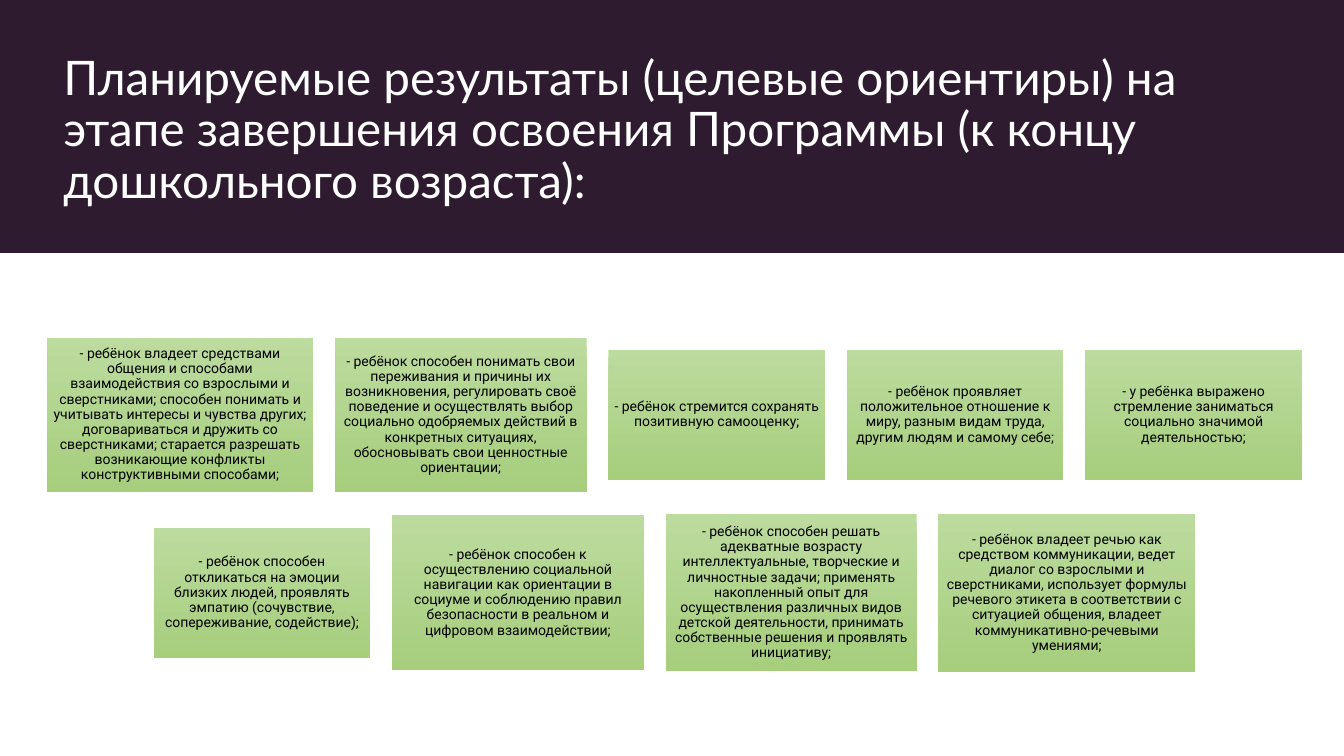
import dataclasses

import pptx
import pptx.dml.color
import pptx.enum.shapes
import pptx.enum.text
import pptx.util


@dataclasses.dataclass(frozen=True)
class Theme:
    paper: str = "FFFFFF"
    band: str = "2F1B30"
    card_top: str = "BCDB9E"
    card_bottom: str = "A6CE7D"
    title_ink: str = "FFFFFF"
    card_ink: str = "000000"
    title_font: str = "Lato"
    card_font: str = "Roboto"
    title_size: int = 34
    card_size: int = 10
    line_spacing: float = 0.9


TITLE = ("Планируемые результаты (целевые ориентиры) на этапе завершения "
         "освоения Программы (к концу дошкольного возраста):")

# Lengths are percentages of the slide's width and height.
ROW_CENTER = 50.18
GAP = 1.61
SMALL = (16.13, 17.2)
ROWS = [
    (54.87, [
        ((19.8, 20.4),
         "- ребёнок владеет средствами общения и способами взаимодействия со "
         "взрослыми и сверстниками; способен понимать и учитывать интересы и "
         "чувства других; договариваться и дружить со сверстниками; старается "
         "разрешать возникающие конфликты конструктивными способами;"),
        ((18.75, 20.4),
         "- ребёнок способен понимать свои переживания и причины их "
         "возникновения, регулировать своё поведение и осуществлять выбор "
         "социально одобряемых действий в конкретных ситуациях, обосновывать "
         "свои ценностные ориентации;"),
        (SMALL, "- ребёнок стремится сохранять позитивную самооценку;"),
        (SMALL,
         "- ребёнок проявляет положительное отношение к миру, разным видам "
         "труда, другим людям и самому себе;"),
        (SMALL,
         "- у ребёнка выражено стремление заниматься социально значимой "
         "деятельностью;"),
    ]),
    (78.4, [
        (SMALL,
         "- ребёнок способен откликаться на эмоции близких людей, проявлять "
         "эмпатию (сочувствие, сопереживание, содействие);"),
        ((18.75, 20.53),
         "- ребёнок способен к осуществлению социальной навигации как "
         "ориентации в социуме и соблюдению правил безопасности в реальном и "
         "цифровом взаимодействии;"),
        ((18.68, 20.8),
         "- ребёнок способен решать адекватные возрасту интеллектуальные, "
         "творческие и личностные задачи; применять накопленный опыт для "
         "осуществления различных видов детской деятельности, принимать "
         "собственные решения и проявлять инициативу;"),
        ((19.13, 20.93),
         "- ребёнок владеет речью как средством коммуникации, ведет диалог со "
         "взрослыми и сверстниками, использует формулы речевого этикета в "
         "соответствии с ситуацией общения, владеет коммуникативно-речевыми "
         "умениями;"),
    ]),
]


def rgb(code):
    return pptx.dml.color.RGBColor.from_string(code)


def apply(target, values):
    for name, value in values.items():
        setattr(target, name, value)


class SlideBuilder:
    def __init__(self, prs, theme):
        self.theme = theme
        self.width, self.height = prs.slide_width, prs.slide_height
        self.s = prs.slides.add_slide(prs.slide_layouts[6])
        fill = self.s.background.fill
        fill.solid()
        fill.fore_color.rgb = rgb(theme.paper)

    def box(self, x, y, w, h):
        """Turn percentages of the slide into lengths."""
        return [round(share * side / 100) for share, side in
                zip((x, y, w, h), (self.width, self.height) * 2)]

    def rect(self, *shares):
        sp = self.s.shapes.add_shape(
            pptx.enum.shapes.MSO_SHAPE.RECTANGLE, *self.box(*shares))
        sp.shadow.inherit = False
        sp.line.fill.background()
        return sp

    def set_text(self, sp, text, frame, align, font, ink):
        tf = sp.text_frame
        apply(tf, {"word_wrap": True, **frame})
        p = tf.paragraphs[0]
        apply(p, {"alignment": align, "line_spacing": self.theme.line_spacing})
        r = p.add_run()
        r.text = text
        apply(r.font, font)
        r.font.color.rgb = rgb(ink)

    def band(self, height):
        sp = self.rect(0, 0, 100, height)
        sp.fill.solid()
        sp.fill.fore_color.rgb = rgb(self.theme.band)

    def title(self, text, *shares):
        t = self.theme
        sp = self.s.shapes.add_textbox(*self.box(*shares))
        self.set_text(sp, text,
                      {"vertical_anchor": pptx.enum.text.MSO_ANCHOR.BOTTOM},
                      pptx.enum.text.PP_ALIGN.LEFT,
                      {"name": t.title_font,
                       "size": pptx.util.Pt(t.title_size)},
                      t.title_ink)

    def card(self, text, *shares):
        t = self.theme
        sp = self.rect(*shares)
        sp.fill.gradient()
        sp.fill.gradient_angle = 270
        for stop, color in zip(sp.fill.gradient_stops,
                               (t.card_top, t.card_bottom)):
            stop.color.rgb = rgb(color)
        frame = dict.fromkeys(
            ("margin_left", "margin_top", "margin_right", "margin_bottom"),
            pptx.util.Inches(0.04))
        frame["vertical_anchor"] = pptx.enum.text.MSO_ANCHOR.MIDDLE
        self.set_text(sp, text, frame, pptx.enum.text.PP_ALIGN.CENTER,
                      {"name": t.card_font, "size": pptx.util.Pt(t.card_size)},
                      t.card_ink)

    def card_row(self, middle, cards):
        """Lay cards side by side, centred on both axes of the row."""
        total = sum(w for (w, _), _ in cards) + GAP * (len(cards) - 1)
        x = ROW_CENTER - total / 2
        for (w, h), text in cards:
            self.card(text, x, middle - h / 2, w, h)
            x += w + GAP


def main():
    prs = pptx.Presentation()
    apply(prs, {"slide_width": pptx.util.Inches(13.33),
                "slide_height": pptx.util.Inches(7.5)})
    builder = SlideBuilder(prs, Theme())
    builder.band(33.47)
    builder.title(TITLE, 3.98, 5.33, 89.2, 22.93)
    for middle, cards in ROWS:
        builder.card_row(middle, cards)
    prs.save("out.pptx")


if __name__ == "__main__":
    main()
